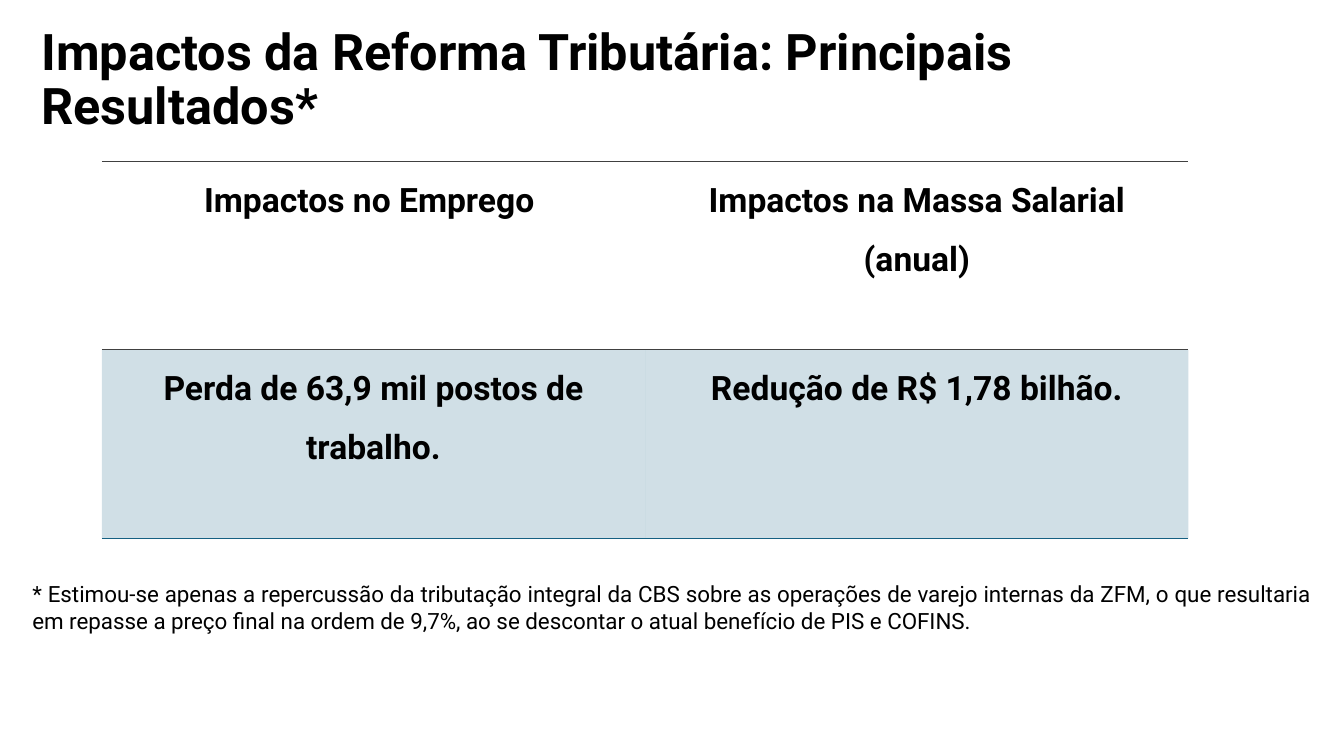
from lxml.etree import SubElement
from pptx import Presentation
from pptx.dml.color import RGBColor
from pptx.enum.text import MSO_ANCHOR, PP_ALIGN
from pptx.oxml.ns import qn
from pptx.util import Pt

BLACK, TEAL, RULE = "000000", "156082", "404040"
THIN_RULE, BASE_RULE = (RULE, 0.5), (TEAL, 1)


def color(hex_value):
    return RGBColor.from_string(hex_value)


class ResultsSlide:
    font_name = "Roboto"

    def __init__(self, presentation):
        self.slide = presentation.slides.add_slide(presentation.slide_layouts[6])

    def style(self, paragraph, size, bold, align, spacing):
        paragraph.alignment = align
        paragraph.line_spacing = spacing
        font = paragraph.font
        font.name, font.size, font.bold = self.font_name, Pt(size), bold
        font.color.rgb = color(BLACK)

    def text(self, content, left, top, width, height, size, bold=False,
             align=PP_ALIGN.LEFT, spacing=1.0, anchor=MSO_ANCHOR.TOP):
        box = self.slide.shapes.add_textbox(Pt(left), Pt(top), Pt(width), Pt(height))
        frame = box.text_frame
        frame.word_wrap = True
        frame.vertical_anchor = anchor
        frame.text = content
        self.style(frame.paragraphs[0], size, bold, align, spacing)

    def borders(self, cell, top, bottom):
        """Draw the horizontal rules of a cell and clear its vertical ones."""
        properties = cell._tc.get_or_add_tcPr()
        for side, rule in (("L", None), ("R", None), ("T", top), ("B", bottom)):
            line = SubElement(properties, qn(f"a:ln{side}"))
            if rule:
                hex_value, width = rule
                line.set("w", str(Pt(width)))
                fill = SubElement(line, qn("a:solidFill"))
                SubElement(fill, qn("a:srgbClr"), val=hex_value)
            else:
                SubElement(line, qn("a:noFill"))

    def tint(self, cell, hex_value, opacity):
        cell.fill.solid()
        cell.fill.fore_color.rgb = color(hex_value)
        swatch = cell._tc.tcPr.find(qn("a:solidFill")).find(qn("a:srgbClr"))
        SubElement(swatch, qn("a:alpha"), val=str(opacity * 1000))

    def table(self, rows, left, top, width, height, size):
        table = self.slide.shapes.add_table(
            len(rows), len(rows[0]), Pt(left), Pt(top), Pt(width), Pt(height)).table
        table.first_row = table.horz_banding = False
        for row_index, row in enumerate(rows):
            is_header = row_index == 0
            for column_index, content in enumerate(row):
                cell = table.cell(row_index, column_index)
                cell.margin_left = cell.margin_right = Pt(5)
                cell.margin_top = cell.margin_bottom = 0
                cell.text = content
                self.style(cell.text_frame.paragraphs[0], size, True, PP_ALIGN.CENTER, 1.5)
                self.borders(cell, THIN_RULE, THIN_RULE if is_header else BASE_RULE)
                if is_header:
                    cell.fill.background()
                else:
                    self.tint(cell, TEAL, 20)


def main():
    presentation = Presentation()
    presentation.slide_width, presentation.slide_height = Pt(960), Pt(540)
    results = ResultsSlide(presentation)
    results.text("Impactos da Reforma Tributária: Principais Resultados*",
                 22.5, 5.8, 912, 104.4, 36, bold=True, spacing=0.9,
                 anchor=MSO_ANCHOR.MIDDLE)
    results.table([
        ["Impactos no Emprego ", "Impactos na Massa Salarial (anual)"],
        ["Perda de 63,9 mil postos de trabalho.", "Redução de R$ 1,78 bilhão."],
    ], 72.7, 115.2, 776.2, 269.3, 24)
    results.text("* Estimou-se apenas a repercussão da tributação integral da CBS sobre as "
                 "operações de varejo internas da ZFM, o que resultaria em repasse a preço "
                 "final na ordem de 9,7%, ao se descontar o atual benefício de PIS e COFINS.",
                 16, 411.1, 928, 46, 16, align=PP_ALIGN.JUSTIFY)
    presentation.save("out.pptx")


if __name__ == "__main__":
    main()
